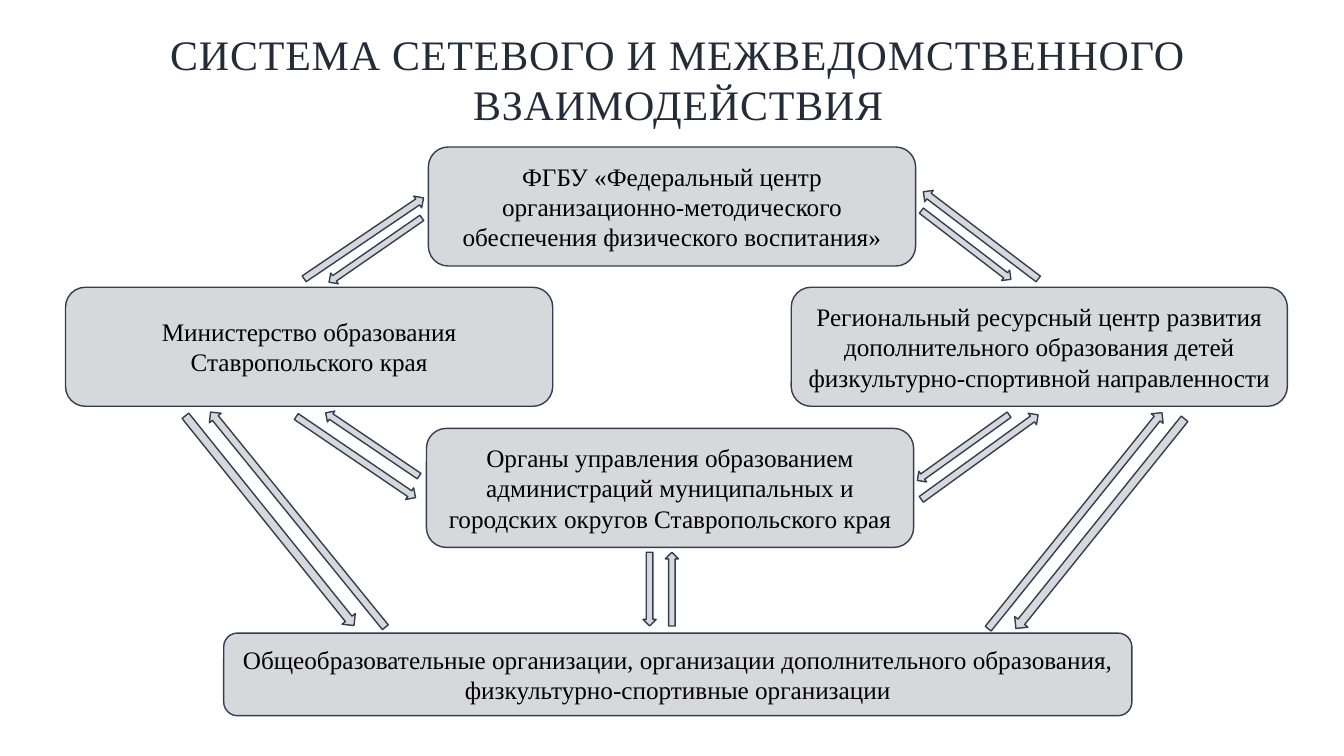
from lxml import etree
from pptx import Presentation
from pptx.dml.color import RGBColor
from pptx.enum import shapes, text
from pptx.oxml import ns
from pptx.util import Pt

TITLE = "СИСТЕМА СЕТЕВОГО И МЕЖВЕДОМСТВЕННОГО ВЗАИМОДЕЙСТВИЯ"
TITLE_PLACE = (95.8, 16.6, 777.6, 79.9)

# wording, left, top, width, height
ORGANISATIONS = [
    ("ФГБУ «Федеральный центр организационно-методического обеспечения "
     "физического воспитания»", 306, 105, 348, 85),
    ("Министерство образования Ставропольского края", 46.8, 205.2, 348, 85),
    ("Региональный ресурсный центр развития дополнительного образования детей "
     "физкультурно-спортивной направленности", 565.2, 205.2, 354.4, 85),
    ("Органы управления образованием администраций муниципальных и "
     "городских округов Ставропольского края", 304.6, 306, 348, 85),
    ("Общеобразовательные организации, организации дополнительного "
     "образования, физкультурно-спортивные организации", 159.8, 452.2, 648.7, 59),
]

# thickness, length of each arrow size
ARROW_SIZES = {
    "short": (9.4, 80.6),
    "medium": (10.1, 103),
    "long": (10.8, 198),
    "wide": (12.2, 192.2),
    "upright": (9.4, 52.6),
}

# direction, size, centre x, centre y, rotation
ARROWS = [
    ("up", "medium", 259.9, 170.3, 55.9),
    ("down", "short", 268.2, 178.6, 55.3),
    ("up", "medium", 700.6, 168.1, 307.2),
    ("down", "short", 690.1, 175, 307.5),
    ("down", "short", 266, 317.5, 124.1),
    ("up", "medium", 254.2, 326.5, 124.2),
    ("down", "long", 212.8, 371.2, 140.9),
    ("up", "wide", 192.6, 371.9, 141.2),
    ("up", "upright", 464, 420.8, 180),
    ("down", "upright", 479.9, 420.8, 180),
    ("down", "long", 767.9, 371.9, 218.8),
    ("up", "wide", 785.9, 374, 218.8),
    ("up", "medium", 699.8, 326.5, 54.1),
    ("down", "short", 688, 319.7, 54.4),
]

THEME = {
    "font": "Times New Roman",
    "title": RGBColor(0x24, 0x2C, 0x38),
    "slate": RGBColor(0x33, 0x3F, 0x50),
    "label": RGBColor(0, 0, 0),
    "title_size": 30,
    "label_size": 18,
    "title_spacing": 0.6,
    "opacity": 20,
}

KINDS = {
    "box": shapes.MSO_SHAPE.ROUNDED_RECTANGLE,
    "up": shapes.MSO_SHAPE.UP_ARROW,
    "down": shapes.MSO_SHAPE.DOWN_ARROW,
}


def write(frame, wording, size, color):
    """Put one centred, wrapped paragraph into the frame."""
    frame.word_wrap = True
    para = frame.paragraphs[0]
    para.alignment = text.PP_ALIGN.CENTER
    span = para.add_run()
    span.text = wording
    span.font.name = THEME["font"]
    span.font.size = Pt(size)
    span.font.color.rgb = color
    return span


def add_tinted(page, kind, *place):
    """Add a preset shape with a translucent fill and a thin outline."""
    shape = page.shapes.add_shape(KINDS[kind], *map(Pt, place))
    shape.shadow.inherit = False
    shape.fill.solid()
    shape.fill.fore_color.rgb = THEME["slate"]
    shape.line.color.rgb = THEME["slate"]
    shape.line.width = Pt(1)
    color = shape.fill._xPr.find(ns.qn("a:solidFill"))[0]
    alpha = etree.SubElement(color, ns.qn("a:alpha"))
    alpha.set("val", str(THEME["opacity"] * 1000))
    return shape


def add_title(page):
    box = page.shapes.add_textbox(*map(Pt, TITLE_PLACE))
    span = write(box.text_frame, TITLE, THEME["title_size"], THEME["title"])
    span.font._element.set("spc", str(round(THEME["title_spacing"] * 100)))


def main():
    deck = Presentation()
    deck.slide_width, deck.slide_height = Pt(960), Pt(540)
    page = deck.slides.add_slide(deck.slide_layouts[6])
    add_title(page)
    for wording, *place in ORGANISATIONS:
        box = add_tinted(page, "box", *place)
        box.text_frame.vertical_anchor = text.MSO_ANCHOR.MIDDLE
        write(box.text_frame, wording, THEME["label_size"], THEME["label"])
    for direction, size, x, y, rotation in ARROWS:
        width, height = ARROW_SIZES[size]
        arrow = add_tinted(page, direction, x - width / 2, y - height / 2,
                           width, height)
        arrow.rotation = rotation
    deck.save("out.pptx")


if __name__ == "__main__":
    main()
